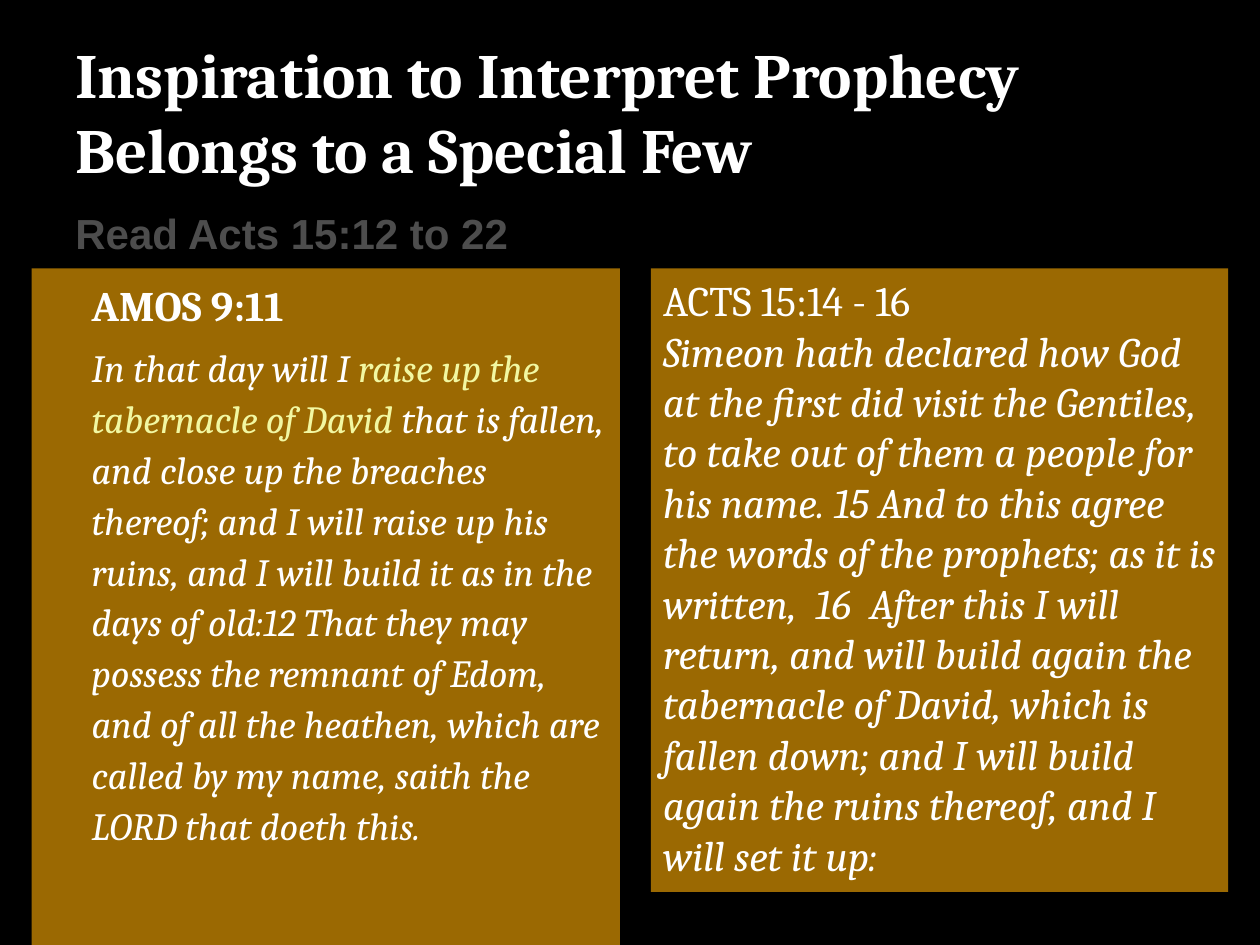
from pptx import Presentation
from pptx.dml.color import RGBColor
from pptx.enum.shapes import MSO_SHAPE
from pptx.enum.text import MSO_ANCHOR, MSO_AUTO_SIZE, PP_ALIGN
from pptx.util import Cm, Pt

RECTANGLE = MSO_SHAPE.RECTANGLE
TOP, MIDDLE = MSO_ANCHOR.TOP, MSO_ANCHOR.MIDDLE
LEFT = PP_ALIGN.LEFT
NO_AUTOFIT = MSO_AUTO_SIZE.NONE
TITLE_ONLY = 5

BLACK, WHITE, GRAY = "000000", "FFFFFF", "4D4D4D"
BROWN, YELLOW = "9B6902", "F2F8A2"

AMOS_OPENING = "In that day will I "
AMOS_HIGHLIGHT = "raise up the tabernacle of David"
AMOS_REST = (
    " that is fallen, and close up the breaches thereof; and I will raise up "
    "his ruins, and I will build it as in the days of old:12 That they may "
    "possess the remnant of Edom, and of all the heathen, which are called by "
    "my name, saith the LORD that doeth this."
)
ACTS_VERSES = (
    "Simeon hath declared how God at the first did visit the Gentiles, to take "
    "out of them a people for his name. 15 And to this agree the words of the "
    "prophets; as it is written,  16  After this I will return, and will build "
    "again the tabernacle of David, which is fallen down; and I will build "
    "again the ruins thereof, and I will set it up:"
)


def color(hex_string):
    return RGBColor.from_string(hex_string)


def prepare_frame(shape, anchor=TOP):
    frame = shape.text_frame
    frame.word_wrap = True
    frame.auto_size = NO_AUTOFIT
    frame.vertical_anchor = anchor
    frame.margin_left = frame.margin_right = Cm(0.25)
    frame.margin_top = frame.margin_bottom = Cm(0.13)
    return frame


def format_paragraph(paragraph, line_spacing=1.0, space_before=0):
    paragraph.alignment = LEFT
    paragraph.line_spacing = line_spacing
    paragraph.space_before = Pt(space_before)
    return paragraph


def add_run(paragraph, text, size, fill=WHITE, name="Cambria",
            bold=False, italic=False):
    run = paragraph.add_run()
    run.text = text
    font = run.font
    font.name, font.size = name, Pt(size)
    font.bold, font.italic = bold, italic
    font.color.rgb = color(fill)


def add_title(slide, text):
    title = slide.shapes.title
    title.left, title.top = Cm(1.27), Cm(0.64)
    title.width, title.height = Cm(22.86), Cm(3.18)
    frame = prepare_frame(title, MIDDLE)
    add_run(format_paragraph(frame.paragraphs[0]), text, 36, bold=True)


def add_reading_note(slide, text):
    box = slide.shapes.add_textbox(Cm(1.27), Cm(4.06), Cm(9.96), Cm(1.27))
    paragraph = format_paragraph(prepare_frame(box).paragraphs[0], space_before=1)
    add_run(paragraph, text, 24, GRAY, "Arial", bold=True)


def add_panel(slide, left, width, height):
    """Add a brown scripture panel and return its text frame."""
    panel = slide.shapes.add_shape(RECTANGLE, left, Cm(5.41), width, height)
    panel.shadow.inherit = False
    panel.fill.solid()
    panel.fill.fore_color.rgb = color(BROWN)
    panel.line.fill.background()
    return prepare_frame(panel)


def add_amos_panel(slide):
    frame = add_panel(slide, Cm(0.64), Cm(11.86), Cm(13.64))
    frame.margin_left = Cm(1.21)
    heading = format_paragraph(frame.paragraphs[0], 1.1, 8)
    add_run(heading, "AMOS 9:11", 24, bold=True)
    verses = format_paragraph(frame.add_paragraph(), 1.1, 5.5)
    for text, fill in ((AMOS_OPENING, WHITE), (AMOS_HIGHLIGHT, YELLOW),
                       (AMOS_REST, WHITE)):
        add_run(verses, text, 22, fill, italic=True)


def add_acts_panel(slide):
    frame = add_panel(slide, Cm(13.12), Cm(11.64), Cm(12.57))
    add_run(format_paragraph(frame.paragraphs[0]), "ACTS 15:14 - 16", 24)
    add_run(format_paragraph(frame.add_paragraph()), ACTS_VERSES, 24, italic=True)


def main():
    presentation = Presentation()
    presentation.slide_width, presentation.slide_height = Cm(25.4), Cm(19.05)
    slide = presentation.slides.add_slide(presentation.slide_layouts[TITLE_ONLY])
    slide.background.fill.solid()
    slide.background.fill.fore_color.rgb = color(BLACK)
    add_title(slide, "Inspiration to Interpret Prophecy Belongs to a Special Few")
    add_amos_panel(slide)
    add_reading_note(slide, "Read Acts 15:12 to 22")
    add_acts_panel(slide)
    presentation.save("out.pptx")


if __name__ == "__main__":
    main()
